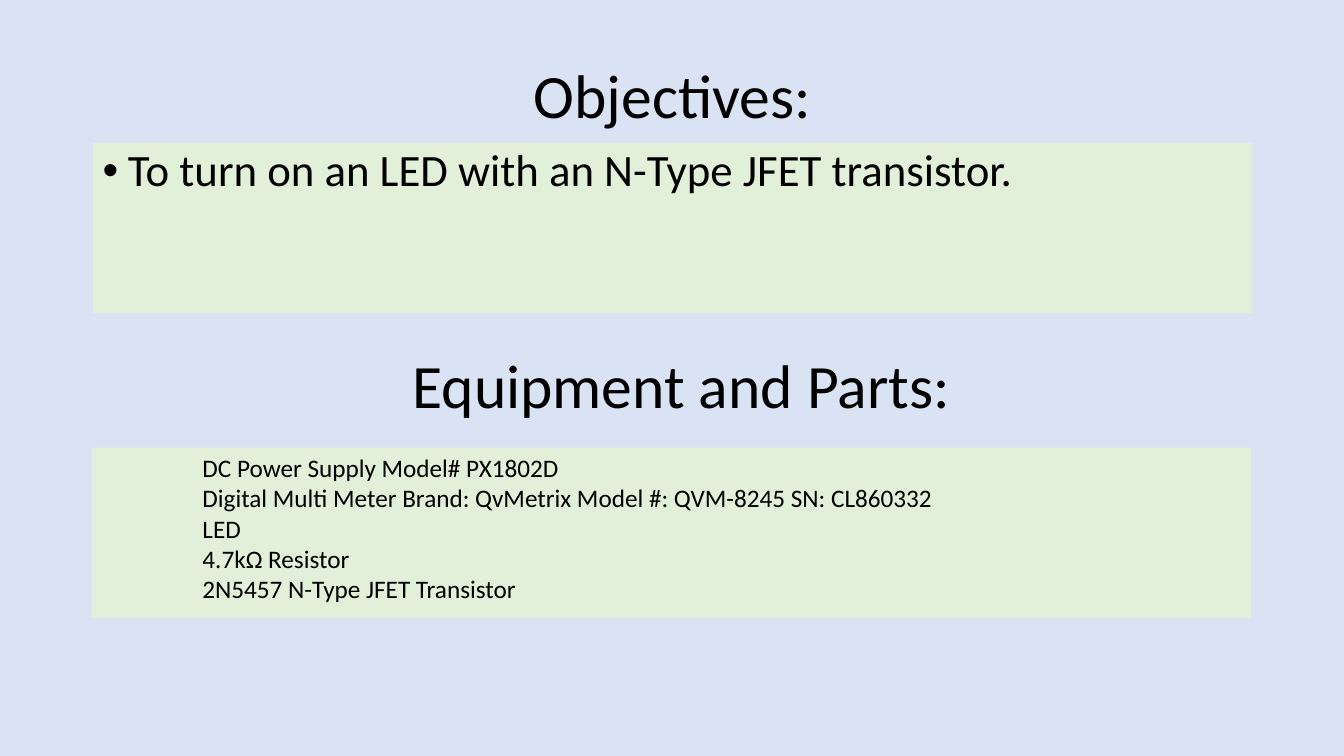
from dataclasses import dataclass

from lxml import etree
from pptx import Presentation
from pptx import util as u
from pptx.dml.color import RGBColor
from pptx.enum import shapes, text
from pptx.oxml.ns import qn

EMU_PER_PX = 9144  # 100 px to the inch


@dataclass(frozen=True)
class Theme:
    background: str = "DAE3F3"
    panel: str = "E2F0D9"
    ink: str = "000000"
    font: str = "Calibri"
    heading_size: int = 44
    objective_size: int = 32
    part_size: int = 18


@dataclass(frozen=True)
class Area:
    left: int
    top: int
    width: int
    height: int


THEME = Theme()
OBJECTIVES_HEADING = Area(92, 25, 1150, 145)
OBJECTIVES_PANEL = Area(92, 142, 1150, 169)
PARTS_HEADING = Area(101, 313, 1150, 145)
PARTS_PANEL = Area(91, 444, 1150, 169)

OBJECTIVES = ["To turn on an LED with an N-Type JFET transistor."]
PARTS = [
    "DC Power Supply Model# PX1802D",
    "Digital Multi Meter Brand: QvMetrix Model #: QVM-8245 SN: CL860332",
    "LED",
    "4.7kΩ Resistor",
    "2N5457 N-Type JFET Transistor",
]


def px(length: int) -> u.Emu:
    return u.Emu(length * EMU_PER_PX)


def place(shape, area: Area) -> None:
    shape.left, shape.top = px(area.left), px(area.top)
    shape.width, shape.height = px(area.width), px(area.height)


def write(shape, lines: list[str], *, size: int, align=text.PP_ALIGN.LEFT,
          anchor=text.MSO_ANCHOR.TOP, spacing: float = 1.0, before: int = 0,
          level: int = 0, margin: int = 0, indent: int = 0, bullet: str = "") -> None:
    frame = shape.text_frame
    frame.word_wrap = True
    frame.auto_size = text.MSO_AUTO_SIZE.NONE
    frame.vertical_anchor = anchor
    for index, line in enumerate(lines):
        para = frame.add_paragraph() if index else frame.paragraphs[0]
        para.alignment, para.level = align, level
        para.line_spacing, para.space_before = spacing, u.Pt(before)
        # Indents and bullet
        props = para._p.get_or_add_pPr()
        props.set("marL", str(px(margin)))
        props.set("indent", str(px(indent)))
        if bullet:
            etree.SubElement(props, qn("a:buFont")).set("typeface", "Arial")
            etree.SubElement(props, qn("a:buChar")).set("char", bullet)
        else:
            etree.SubElement(props, qn("a:buNone"))
        span = para.add_run()
        span.text = line
        span.font.name, span.font.size = THEME.font, u.Pt(size)
        span.font.color.rgb = RGBColor.from_string(THEME.ink)


def write_heading(box, area: Area, heading: str) -> None:
    place(box, area)
    write(box, [heading], size=THEME.heading_size, align=text.PP_ALIGN.CENTER,
          anchor=text.MSO_ANCHOR.MIDDLE, spacing=0.9)


def add_panel(page, area: Area, lines: list[str], **text_format) -> None:
    panel = page.shapes.add_shape(shapes.MSO_SHAPE.RECTANGLE, 0, 0, 0, 0)
    place(panel, area)
    panel.shadow.inherit = False
    panel.fill.solid()
    panel.fill.fore_color.rgb = RGBColor.from_string(THEME.panel)
    panel.line.fill.background()
    write(panel, lines, **text_format)


def main() -> None:
    deck = Presentation()
    deck.slide_width, deck.slide_height = px(1333), px(750)
    page = deck.slides.add_slide(deck.slide_layouts.get_by_name("Title Only"))
    page.background.fill.solid()
    page.background.fill.fore_color.rgb = RGBColor.from_string(THEME.background)

    # Objectives
    write_heading(page.shapes.title, OBJECTIVES_HEADING, "Objectives:")
    add_panel(page, OBJECTIVES_PANEL, OBJECTIVES, size=THEME.objective_size,
              spacing=0.9, before=10, margin=25, indent=-25, bullet="•")

    # Equipment and parts
    write_heading(page.shapes.add_textbox(0, 0, 0, 0), PARTS_HEADING, "Equipment and Parts:")
    add_panel(page, PARTS_PANEL, PARTS, size=THEME.part_size, level=2, margin=100)

    deck.save("out.pptx")


if __name__ == "__main__":
    main()
